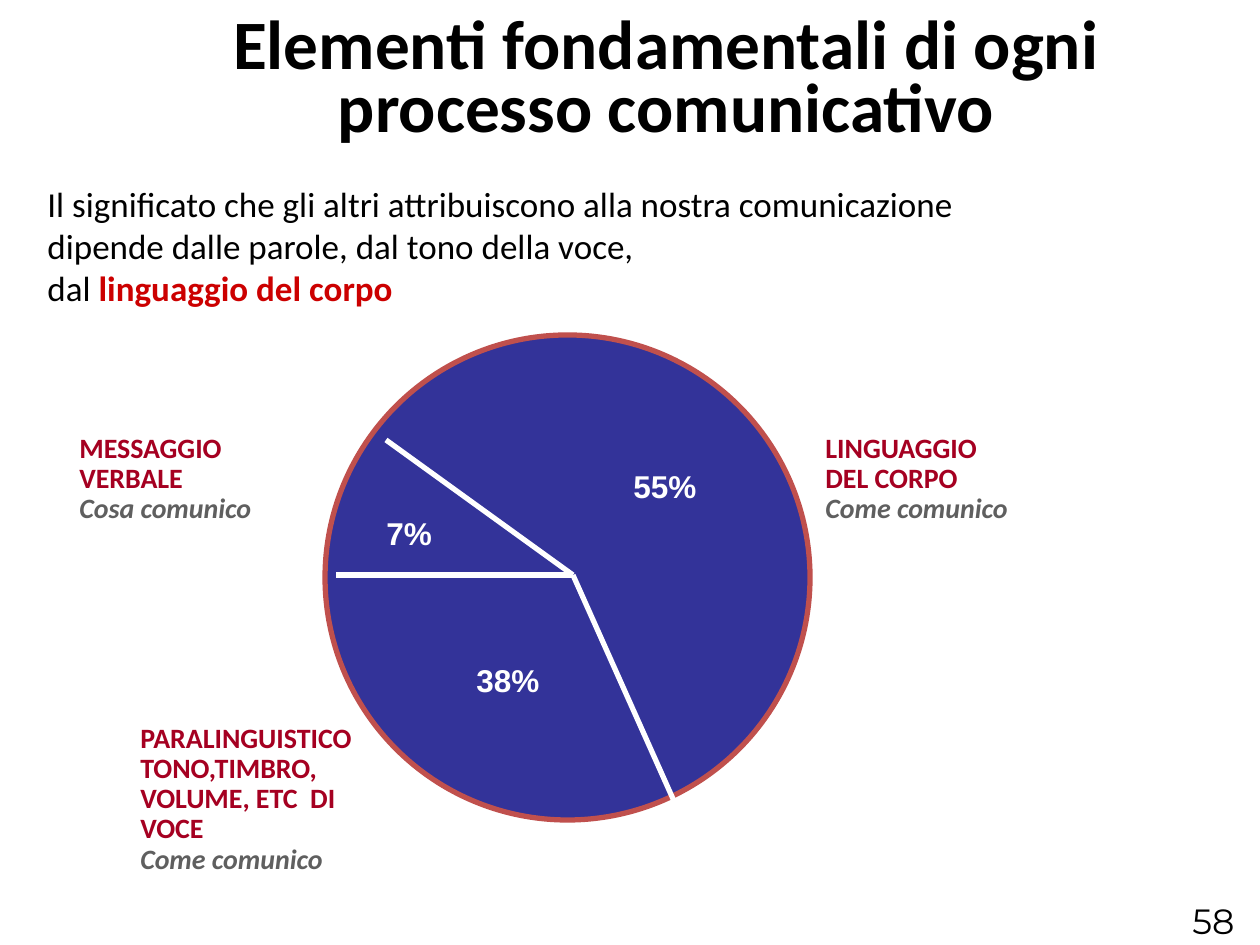
from dataclasses import dataclass

from lxml import etree
from pptx import Presentation
from pptx.dml.color import RGBColor
from pptx.enum.shapes import MSO_CONNECTOR, MSO_SHAPE
from pptx.enum.text import MSO_ANCHOR, PP_ALIGN
from pptx.oxml.ns import qn
from pptx.util import Emu, Pt

LEFT, CENTER, RIGHT = PP_ALIGN.LEFT, PP_ALIGN.CENTER, PP_ALIGN.RIGHT
TOP, MIDDLE = MSO_ANCHOR.TOP, MSO_ANCHOR.MIDDLE
STRAIGHT = MSO_CONNECTOR.STRAIGHT
OVAL = MSO_SHAPE.OVAL
PX_PER_INCH = 126


@dataclass(frozen=True)
class Theme:
    black: str = "000000"
    white: str = "FFFFFF"
    disc: str = "333399"
    rim: str = "C0504D"
    heading: str = "A50021"
    remark: str = "5F5F5F"
    accent: str = "CC0000"
    body_font: str = "Calibri"
    share_font: str = "Arial"
    number_font: str = "Montserrat"
    title_size: float = 39.6
    body_size: int = 20
    share_size: int = 18
    label_size: int = 16
    line_width: int = 3


THEME = Theme()


def px(n):
    return Emu(round(n * 914400 / PX_PER_INCH))


def rgb(value):
    return RGBColor.from_string(value)


def add_text(s, box, lines, size, color=THEME.black, font=THEME.body_font, bold=None,
             align=LEFT, anchor=TOP, spacing=None, wrap=True):
    """Add a text box with one paragraph per line and return the paragraphs."""
    tf = s.shapes.add_textbox(*map(px, box)).text_frame
    tf.word_wrap = wrap
    tf.vertical_anchor = anchor
    tf.text = "\n".join(lines)
    for p in tf.paragraphs:
        p.alignment = align
        p.line_spacing = spacing
        p.font.name, p.font.size, p.font.bold = font, Pt(size), bold
        p.font.color.rgb = rgb(color)
    return tf.paragraphs


def add_disc(s, box):
    sp = s.shapes.add_shape(OVAL, *map(px, box))
    sp.shadow.inherit = False
    sp.fill.solid()
    sp.fill.fore_color.rgb = rgb(THEME.disc)
    sp.line.color.rgb = rgb(THEME.rim)
    sp.line.width = Pt(THEME.line_width)


def add_divider(s, start, end):
    line = s.shapes.add_connector(STRAIGHT, *map(px, start + end))
    line.line.color.rgb = rgb(THEME.white)
    line.line.width = Pt(THEME.line_width)
    etree.SubElement(line._element.spPr, qn("a:effectLst"))


def add_share(s, box, text):
    add_text(s, box, [text], THEME.share_size, THEME.white, THEME.share_font,
             bold=True, spacing=0.9)


def add_label(s, box, headings, remark, wrap=False):
    """Add bold headings closed by an italic grey remark."""
    paragraphs = add_text(s, box, headings + [remark], THEME.label_size, THEME.heading,
                          bold=True, spacing=0.9, wrap=wrap)
    last = paragraphs[-1].font
    last.italic = True
    last.color.rgb = rgb(THEME.remark)


def add_intro(s, box):
    paragraphs = add_text(s, box, [
        "Il significato che gli altri attribuiscono alla nostra comunicazione "
        "dipende dalle parole, dal tono della voce,",
        "dal ",
    ], THEME.body_size)
    r = paragraphs[-1].add_run()
    r.text = "linguaggio del corpo"
    r.font.bold = True
    r.font.color.rgb = rgb(THEME.accent)


def main():
    prs = Presentation()
    prs.slide_width, prs.slide_height = px(1260), px(945)
    s = prs.slides.add_slide(prs.slide_layouts[6])

    # Divided disc
    add_disc(s, (325, 335, 485, 485))
    hub = (573, 575)
    for end in ((386, 440), (674, 801), (336, 575)):
        add_divider(s, hub, end)

    # Shares
    add_share(s, (374, 512, 83, 47), "7%")
    add_share(s, (464, 659, 107, 47), "38%")
    add_share(s, (621, 465, 107, 47), "55%")

    # Labels around the disc
    add_label(s, (67, 428, 200, 105), ["MESSAGGIO", "VERBALE"], "Cosa comunico")
    add_label(s, (128, 718, 241, 165),
              ["PARALINGUISTICO", "TONO,TIMBRO, VOLUME, ETC  DI VOCE"],
              "Come comunico", wrap=True)
    add_label(s, (813, 428, 210, 105), ["LINGUAGGIO", "DEL CORPO"], "Come comunico")

    # Title, introduction and page number
    add_text(s, (121, 20, 1090, 126),
             ["Elementi fondamentali di ogni processo comunicativo"],
             THEME.title_size, bold=True, align=CENTER, anchor=MIDDLE, spacing=Pt(36))
    add_intro(s, (35, 176, 1029, 139))
    add_text(s, (1005, 893, 242, 33), ["58"], THEME.body_size,
             font=THEME.number_font, align=RIGHT)

    prs.save("out.pptx")


if __name__ == "__main__":
    main()
